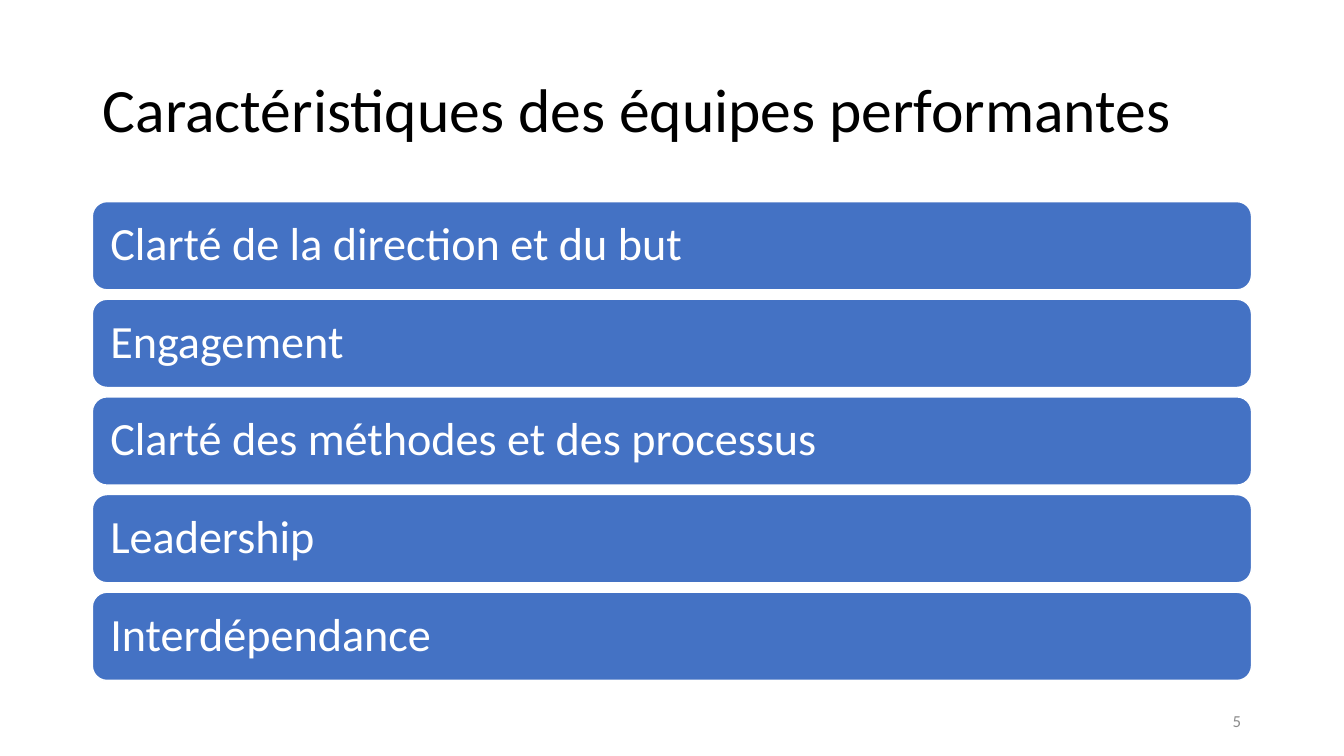
from dataclasses import dataclass

from pptx import Presentation
from pptx.dml.color import RGBColor
from pptx.enum.shapes import MSO_SHAPE
from pptx.enum.text import MSO_ANCHOR, PP_ALIGN
from pptx.util import Emu, Pt

PX = 9525  # EMU per px, 96 px to the inch


@dataclass(frozen=True)
class Theme:
    font: str = "Calibri"
    ink: str = "000000"
    bar: str = "4472C4"
    light: str = "FFFFFF"
    muted: str = "8C8C8C"
    title: int = 44
    body: int = 33
    small: int = 12


THEME = Theme()
LEFT, WIDTH = 88, 1104
TOP, HEIGHT, STEP = 192, 84, 93
TRAITS = [
    "Clarté de la direction et du but",
    "Engagement",
    "Clarté des méthodes et des processus",
    "Leadership",
    "Interdépendance",
]


def px(*sizes):
    return [Emu(size * PX) for size in sizes]


def write(shape, text, *, size, color, align=PP_ALIGN.LEFT, inset=10, pitch=1.0):
    """Fill a shape with one vertically centred paragraph."""
    frame = shape.text_frame
    frame.word_wrap = True
    frame.vertical_anchor = MSO_ANCHOR.MIDDLE
    frame.margin_left, frame.margin_right = px(inset, inset)
    para = frame.paragraphs[0]
    para.text = text
    para.alignment = align
    para.line_spacing = pitch
    font = para.runs[0].font
    font.name = THEME.font
    font.size = Pt(size)
    font.color.rgb = RGBColor.from_string(color)


def add_label(slide, box, text, **style):
    write(slide.shapes.add_textbox(*px(*box)), text, **style)


def add_bar(slide, top, text):
    box = px(LEFT, top, WIDTH, HEIGHT)
    bar = slide.shapes.add_shape(MSO_SHAPE.ROUNDED_RECTANGLE, *box)
    bar.shadow.inherit = False
    bar.fill.solid()
    bar.fill.fore_color.rgb = RGBColor.from_string(THEME.bar)
    bar.line.color.rgb = RGBColor.from_string(THEME.light)
    bar.line.width = Pt(1)
    write(bar, text, size=THEME.body, color=THEME.light, inset=13, pitch=0.9)


def main():
    deck = Presentation()
    deck.slide_width, deck.slide_height = px(1280, 720)
    slide = deck.slides.add_slide(deck.slide_layouts[6])
    add_label(slide, (LEFT, 38, WIDTH, 139),
              "Caractéristiques des équipes performantes",
              size=THEME.title, color=THEME.ink, pitch=0.9)
    for row, trait in enumerate(TRAITS):
        add_bar(slide, TOP + row * STEP, trait)
    add_label(slide, (904, 667, 288, 38), "5",
              size=THEME.small, color=THEME.muted, align=PP_ALIGN.RIGHT)
    deck.save("out.pptx")


if __name__ == "__main__":
    main()
